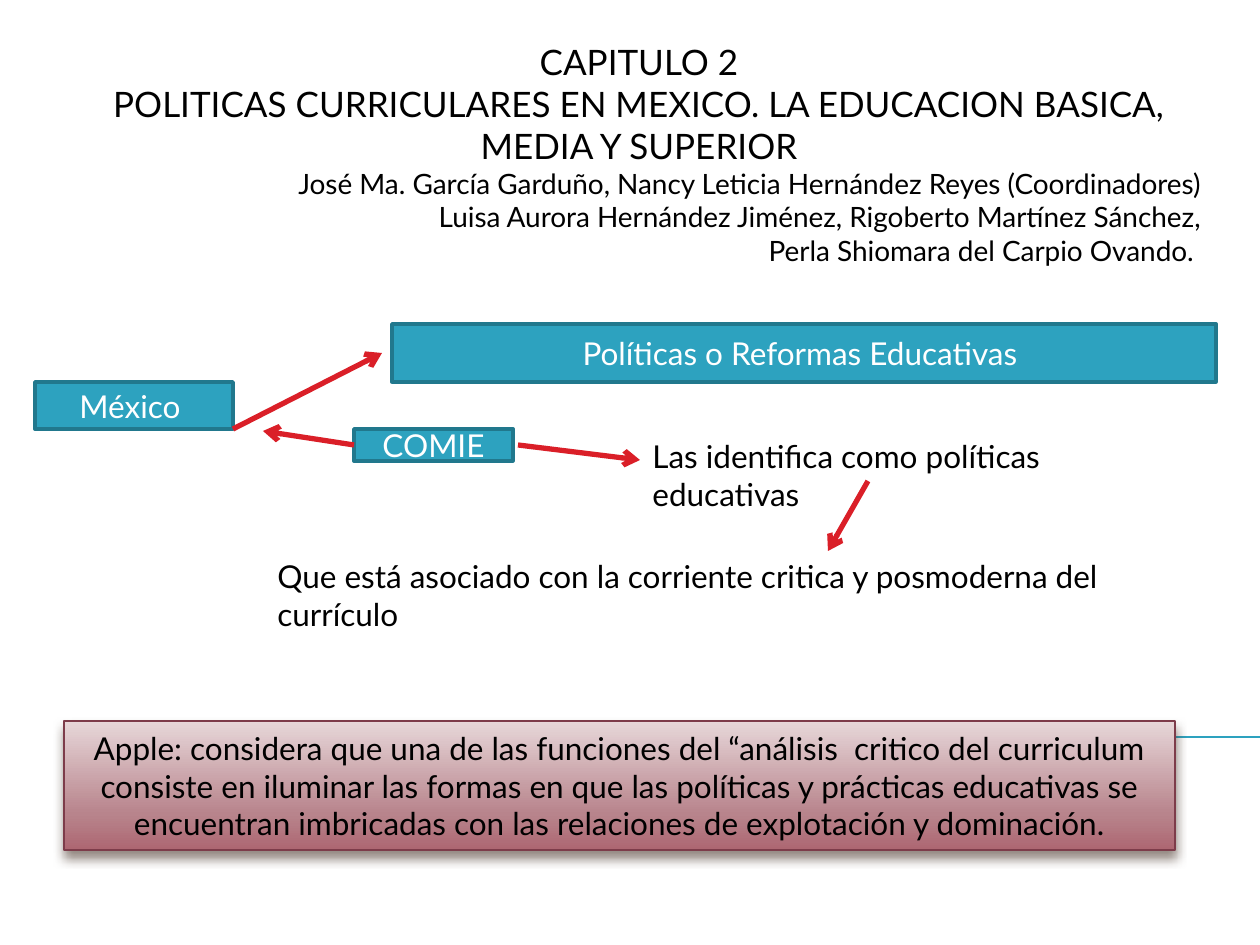
from dataclasses import dataclass

from lxml.etree import SubElement as Sub
from pptx import Presentation as Deck
from pptx.dml.color import RGBColor as Rgb
from pptx.enum.shapes import MSO_CONNECTOR as Link, MSO_SHAPE as Form
from pptx.enum.text import MSO_ANCHOR as Anchor, MSO_AUTO_SIZE as Fit, PP_ALIGN as Align
from pptx.oxml.ns import qn
from pptx.util import Pt

SCALE = 914400 / 126


@dataclass(frozen=True)
class Theme:
    font: str = "Lato"
    ink: str = "000000"
    pale: str = "FFFFFF"
    teal: str = "2DA2BF"
    edge: str = "21788D"
    red: str = "DA1F28"
    wine: str = "7D3C4A"
    shade: str = "4E3B30"
    fade: tuple = ((0, "E7D7D9"), (72, "B8848C"), (100, "AD6772"))
    head: int = 20
    text: int = 18
    names: int = 16


def emu(*nums):
    return [round(n * SCALE) for n in nums]


def apply(item, values):
    for key, val in values.items():
        setattr(item, key, val)


class Page:
    def __init__(self, slide, theme):
        self.slide = slide
        self.theme = theme

    def fill_text(self, shape, rows, color, anchor):
        frame = shape.text_frame
        apply(frame, {"word_wrap": True, "auto_size": Fit.NONE,
                      "vertical_anchor": anchor})
        for i, (text, size, align) in enumerate(rows):
            para = frame.add_paragraph() if i else frame.paragraphs[0]
            apply(para, {"alignment": align, "line_spacing": 1.0})
            run = para.add_run()
            run.text = text
            apply(run.font, {"name": self.theme.font, "size": Pt(size)})
            run.font.color.rgb = Rgb.from_string(color)

    def title(self, area, rows):
        shape = self.slide.shapes.title
        apply(shape, dict(zip(("left", "top", "width", "height"), emu(*area))))
        self.fill_text(shape, rows, self.theme.ink, Anchor.TOP)

    def note(self, area, text):
        shape = self.slide.shapes.add_textbox(*emu(*area))
        self.fill_text(shape, [(text, self.theme.text, Align.LEFT)],
                       self.theme.ink, Anchor.TOP)

    def box(self, area, text, color, edge, width):
        shape = self.slide.shapes.add_shape(Form.RECTANGLE, *emu(*area))
        shape.shadow.inherit = False
        shape.fill.solid()
        shape.fill.fore_color.rgb = Rgb.from_string(self.theme.teal)
        shape.line.color.rgb = Rgb.from_string(edge)
        shape.line.width = Pt(width)
        self.fill_text(shape, [(text, self.theme.text, Align.CENTER)],
                       color, Anchor.MIDDLE)
        return shape

    def label(self, area, text):
        self.box(area, text, self.theme.pale, self.theme.edge, 2)

    def panel(self, area, text):
        shape = self.box(area, text, self.theme.ink, self.theme.wine, 0.79)
        shape.fill.gradient()
        shape.fill.gradient_angle = 270
        props = shape._element.spPr
        stops = props.find(".//" + qn("a:gsLst"))
        stops.clear()
        for spot, color in self.theme.fade:
            stop = Sub(stops, qn("a:gs"), pos=str(spot * 1000))
            Sub(stop, qn("a:srgbClr"), val=color)
        cast = Sub(props.find(qn("a:effectLst")), qn("a:outerShdw"),
                   blurRad=str(Pt(6)), dist=str(Pt(4)), dir="5400000",
                   rotWithShape="0")
        tint = Sub(cast, qn("a:srgbClr"), val=self.theme.shade)
        Sub(tint, qn("a:alpha"), val="60000")

    def line(self, ends, color, width):
        link = self.slide.shapes.add_connector(Link.STRAIGHT, *emu(*ends))
        link.line.color.rgb = Rgb.from_string(color)
        link.line.width = Pt(width)
        Sub(link._element.spPr, qn("a:effectLst"))
        return link

    def arrow(self, ends):
        link = self.line(ends, self.theme.red, 3)
        Sub(link._element.spPr.find(qn("a:ln")), qn("a:tailEnd"), type="arrow")


def main():
    deck = Deck()
    apply(deck, dict(zip(("slide_width", "slide_height"), emu(1260, 945))))
    theme = Theme()
    page = Page(deck.slides.add_slide(deck.slide_layouts[5]), theme)

    page.line((71, 737, 1260, 737), theme.teal, 0.75)
    heads = ("CAPITULO 2",
             "POLITICAS CURRICULARES EN MEXICO. LA EDUCACION BASICA, "
             "MEDIA Y SUPERIOR")
    names = ("José Ma. García Garduño, Nancy Leticia Hernández Reyes (Coordinadores)",
             "Luisa Aurora Hernández Jiménez, Rigoberto Martínez Sánchez,",
             "Perla Shiomara del Carpio Ovando. ")
    page.title((64, 34, 1150, 318),
               [(t, theme.head, Align.CENTER) for t in heads]
               + [(t, theme.names, Align.RIGHT) for t in names])

    for area, text in (
        ((35, 382, 198, 47), "México "),
        ((392, 324, 824, 58), "Políticas o Reformas Educativas "),
        ((354, 429, 159, 32), "COMIE"),
    ):
        page.label(area, text)

    for area, text in (
        ((640, 431, 536, 50), "Las identifica como políticas educativas"),
        ((265, 551, 922, 50),
         "Que está asociado con la corriente critica y posmoderna del currículo"),
    ):
        page.note(area, text)

    for ends in (
        (233, 429, 382, 353),
        (354, 445, 263, 431),
        (518, 445, 640, 460),
        (868, 481, 828, 551),
    ):
        page.arrow(ends)

    page.panel((64, 721, 1111, 129),
               "Apple: considera que una de las funciones del “análisis  critico "
               "del curriculum consiste en iluminar las formas en que las "
               "políticas y prácticas educativas se encuentran imbricadas con "
               "las relaciones de explotación y dominación.")
    deck.save("out.pptx")


if __name__ == "__main__":
    main()
